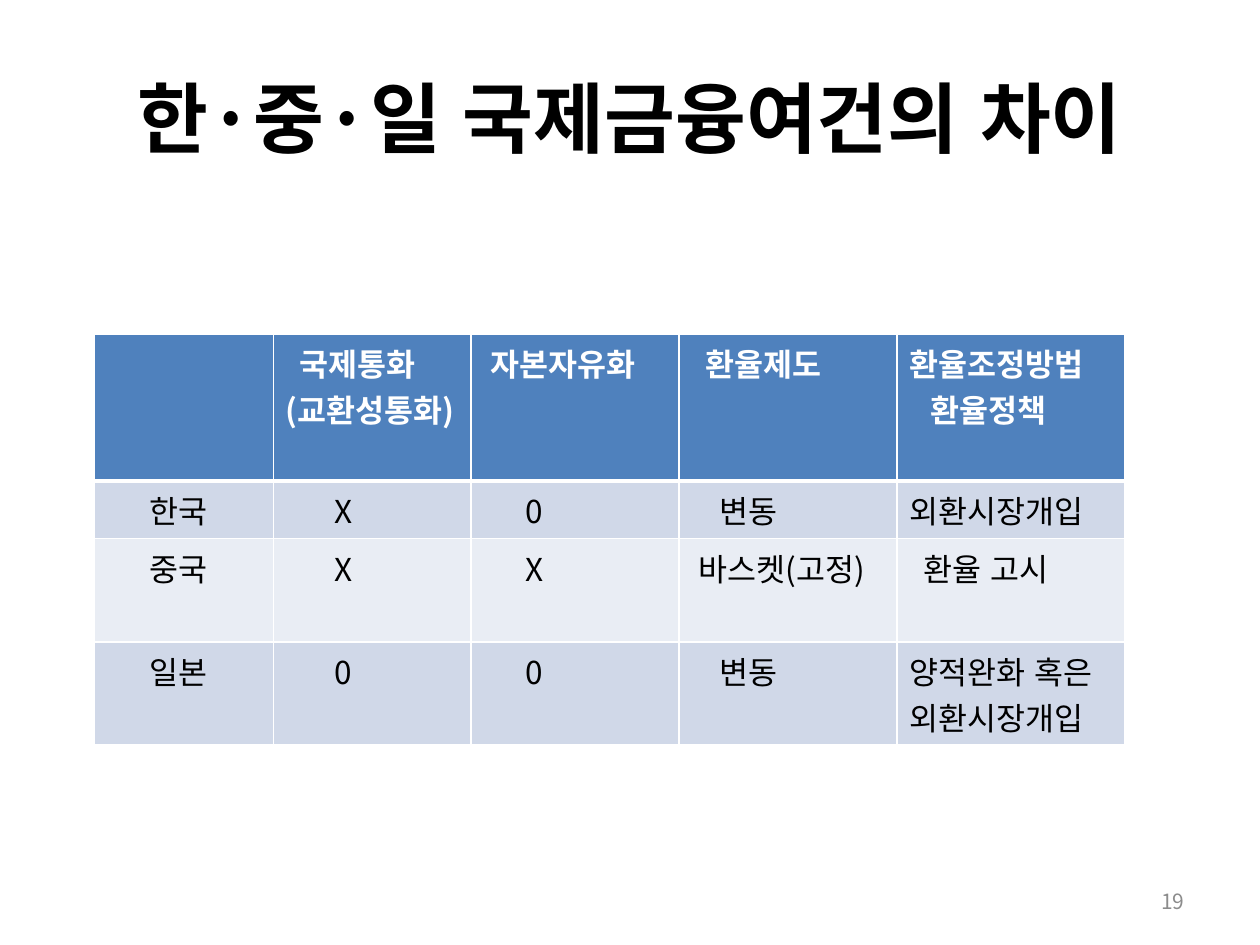
from lxml import etree
from pptx import Presentation, util as u
from pptx.dml import color
from pptx.enum import lang, text
from pptx.oxml import ns

FONT = "Noto Sans CJK KR"
WHITE, BLACK, GREY = "FFFFFF", "000000", "8C8C8C"
HEADER, BANDS = "4F81BD", ("D0D8E8", "E9EDF4")
COLUMNS = (102.2, 113, 118.8, 124.6, 130.3)
ROWS = (84, 33, 59, 59)
STEP = 4

CELLS = (
    ((), ((2, "국제통화"), (0, "(교환성통화)")), ((1, "자본자유화"),),
     ((2, "환율제도"),), ((0, "환율조정방법"), (3, "환율정책"))),
    (((6, "한국"),), ((7, "X"),), ((6, "0"),),
     ((4, "변동"),), ((0, "외환시장개입"),)),
    (((6, "중국"),), ((7, "X"),), ((6, "X"),),
     ((1, "바스켓(고정)"),), ((2, "환율 고시"),)),
    (((6, "일본"),), ((7, "0"),), ((6, "0"),),
     ((4, "변동"),), ((0, "양적완화 혹은"), (0, "외환시장개입"))),
)


def rgb(value):
    return color.RGBColor.from_string(value)


class SlideBuilder:
    """Holds the style and current slide, and adds each kind of element."""

    def __init__(self, page, font):
        self.page = page
        self.font = font

    def add_span(self, para, wording, tint, **formats):
        span = para.add_run()
        span.text = wording
        formats.update(name=self.font, language_id=lang.MSO_LANGUAGE_ID.KOREAN)
        for key, value in formats.items():
            setattr(span.font, key, value)
        span.font.color.rgb = rgb(tint)
        east = etree.Element(ns.qn("a:ea"), typeface=self.font)
        span.font._element.find(ns.qn("a:latin")).addnext(east)

    def text_box(self, bounds, wording, align, tint, **formats):
        box = self.page.shapes.add_textbox(*map(u.Pt, bounds))
        frame = box.text_frame
        frame.word_wrap = True
        frame.vertical_anchor = text.MSO_ANCHOR.MIDDLE
        frame.paragraphs[0].alignment = align
        self.add_span(frame.paragraphs[0], wording, tint, **formats)

    def borders(self, cell, bottom):
        props = cell._tc.get_or_add_tcPr()
        for side, width in (("L", 1), ("R", 1), ("T", 1), ("B", bottom)):
            line = etree.SubElement(props, ns.qn(f"a:ln{side}"), w=str(u.Pt(width)))
            fill = etree.SubElement(line, ns.qn("a:solidFill"))
            etree.SubElement(fill, ns.qn("a:srgbClr"), val=WHITE)

    def cell(self, cell, lines, fill, tint, bold, bottom):
        self.borders(cell, bottom)
        cell.fill.solid()
        cell.fill.fore_color.rgb = rgb(fill)
        frame = cell.text_frame
        frame.paragraphs[0].font.size = u.Pt(18)
        for index, (steps, wording) in enumerate(lines):
            para = frame.add_paragraph() if index else frame.paragraphs[0]
            para._p.get_or_add_pPr().set("indent", str(u.Pt(steps * STEP)))
            self.add_span(para, wording, tint, size=u.Pt(18), bold=bold)

    def table(self, left, top, columns, rows, cells):
        bounds = map(u.Pt, (left, top, sum(columns), sum(rows)))
        table = self.page.shapes.add_table(len(rows), len(columns), *bounds).table
        for column, width in zip(table.columns, columns):
            column.width = u.Pt(width)
        for index, (row, height) in enumerate(zip(table.rows, rows)):
            row.height = u.Pt(height)
            if index:
                style = (BANDS[(index - 1) % 2], BLACK, False, 1)
            else:
                style = (HEADER, WHITE, True, 3)
            for cell, lines in zip(row.cells, cells[index]):
                self.cell(cell, lines, *style)


def main():
    deck = Presentation()
    deck.slide_width, deck.slide_height = u.Pt(720), u.Pt(540)
    builder = SlideBuilder(deck.slides.add_slide(deck.slide_layouts[6]), FONT)
    builder.text_box((36, 21.6, 648, 90), "한·중·일 국제금융여건의 차이",
                     text.PP_ALIGN.CENTER, BLACK, size=u.Pt(44), bold=True)
    builder.table(54, 190.8, COLUMNS, ROWS, CELLS)
    builder.text_box((516, 500.5, 168, 28.8), "19",
                     text.PP_ALIGN.RIGHT, GREY, size=u.Pt(12))
    deck.save("out.pptx")


if __name__ == "__main__":
    main()
